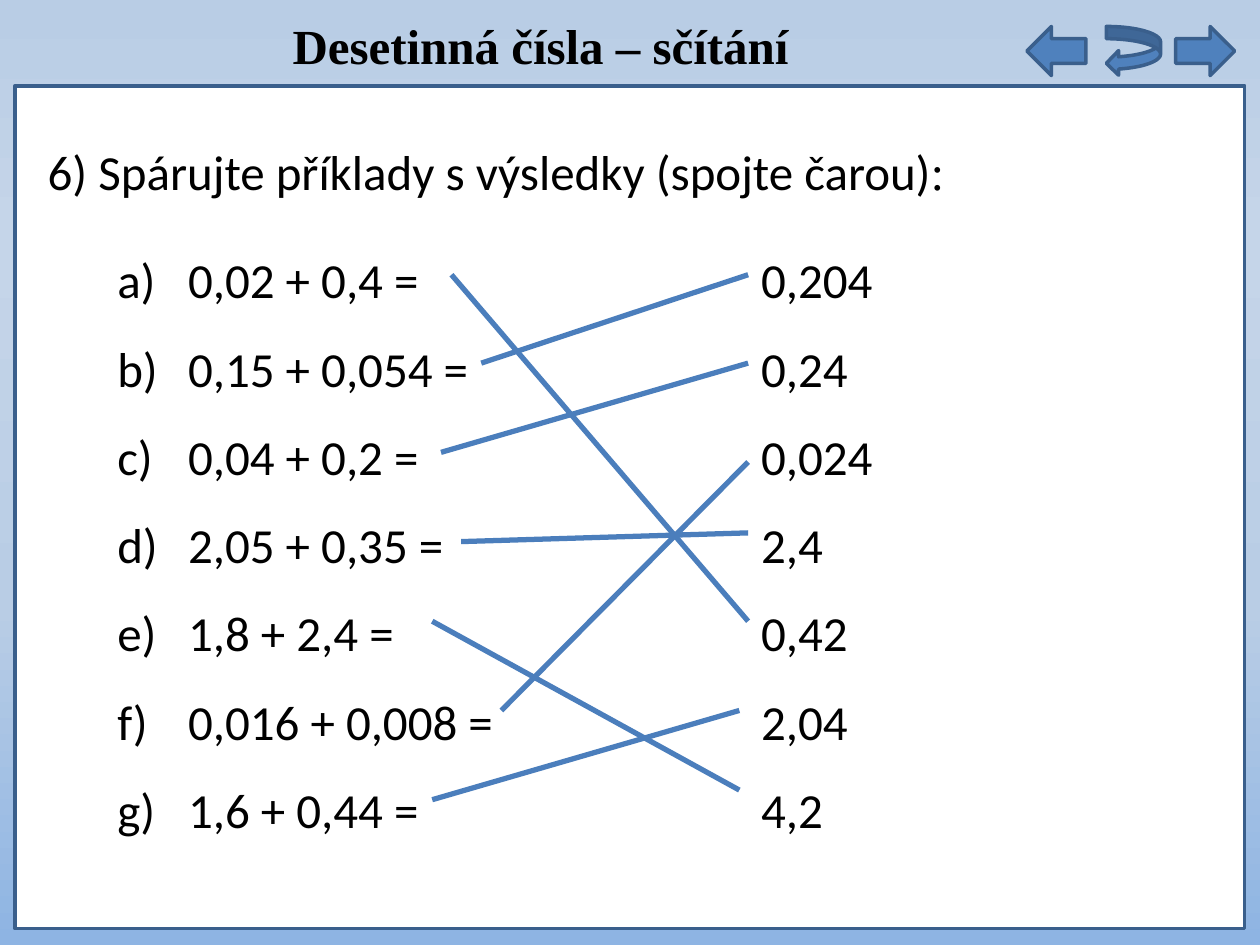
from lxml import etree
from pptx import Presentation
from pptx.dml.color import RGBColor
from pptx.enum import shapes, text
from pptx.oxml.ns import qn
from pptx.util import Pt

TITLE = "Desetinná čísla – sčítání"
TASK = [("6) Spárujte příklady s výsledky (spojte čarou)", "Calibri"),
        (":", "Times New Roman")]

# example, start of its line (x, y), matching result
EXAMPLES = [
    ("0,02 + 0,4 =", (258, 157), "0,42"),
    ("0,15 + 0,054 =", (275, 207.5), "0,204"),
    ("0,04 + 0,2 =", (252, 258.5), "0,24"),
    ("2,05 + 0,35 =", (263.5, 309.5), "2,4"),
    ("1,8 + 2,4 =", (247, 355), "4,2"),
    ("0,016 + 0,008 =", (286.5, 406), "0,024"),
    ("1,6 + 0,44 =", (247, 457), "2,04"),
]
# result -> end of the line that reaches it
RESULTS = {
    "0,204": (427.5, 157),
    "0,24": (427.5, 207.5),
    "0,024": (427.5, 264),
    "2,4": (427.5, 304.5),
    "0,42": (427.5, 355),
    "2,04": (422.5, 406),
    "4,2": (422.5, 451.5),
}
BACKGROUND = [(0, "B9CDE5"), (25, "C5D5E9"), (64, "B9CDE5"), (100, "8EB4E3")]
NAVIGATION = [
    (shapes.MSO_SHAPE.LEFT_ARROW, 586.8, 33.8),
    (shapes.MSO_SHAPE.CURVED_LEFT_ARROW, 632.2, 31),
    (shapes.MSO_SHAPE.RIGHT_ARROW, 671.8, 33.8),
]


def color(value):
    return RGBColor.from_string(value)


def place(shape, left, top, width, height):
    shape.left, shape.top = Pt(left), Pt(top)
    shape.width, shape.height = Pt(width), Pt(height)


def write(shape, paragraphs, spacing=1.5, bold=False, align=text.PP_ALIGN.LEFT,
          anchor=text.MSO_ANCHOR.TOP, fit=text.MSO_AUTO_SIZE.SHAPE_TO_FIT_TEXT,
          lettered=False):
    """Fill a shape with paragraphs, each a list of (text, font) runs."""
    frame = shape.text_frame
    frame.word_wrap = True
    frame.auto_size = fit
    frame.vertical_anchor = anchor
    for number, runs in enumerate(paragraphs):
        paragraph = frame.add_paragraph() if number else frame.paragraphs[0]
        paragraph.alignment = align
        paragraph.line_spacing = spacing
        paragraph.space_before = paragraph.space_after = Pt(0)
        properties = paragraph._p.get_or_add_pPr()
        indent = Pt(40.5) if lettered else 0
        properties.set("marL", str(indent))
        properties.set("indent", str(-indent))
        if lettered:
            etree.SubElement(properties, qn("a:buFont"), typeface="+mj-lt")
            etree.SubElement(properties, qn("a:buAutoNum"), type="alphaLcParenR")
        else:
            etree.SubElement(properties, qn("a:buNone"))
        for words, font_name in runs:
            run = paragraph.add_run()
            run.text = words
            run.font.name = font_name
            run.font.size = Pt(28)
            run.font.bold = bold
            run.font.color.rgb = color("000000")


def add_box(slide, kind, left, top, width, height, fill):
    box = slide.shapes.add_shape(kind, Pt(left), Pt(top), Pt(width), Pt(height))
    box.shadow.inherit = False
    box.fill.solid()
    box.fill.fore_color.rgb = color(fill)
    box.line.color.rgb = color("3A5F8C")
    box.line.width = Pt(2)
    return box


def add_line(slide, start, end):
    line = slide.shapes.add_connector(
        shapes.MSO_CONNECTOR.STRAIGHT, *map(Pt, start + end))
    line.line.color.rgb = color("4B7EBC")
    line.line.width = Pt(3)
    etree.SubElement(line._element.spPr, qn("a:effectLst"))


def paint_background(slide):
    fill = slide.background.fill
    fill.gradient()
    fill.gradient_angle = 270
    stops = next(slide._element.iter(qn("a:gsLst")))
    for stop in list(stops):
        stops.remove(stop)
    for percent, value in BACKGROUND:
        stop = etree.SubElement(stops, qn("a:gs"), pos=str(percent * 1000))
        etree.SubElement(stop, qn("a:srgbClr"), val=value)


def main():
    deck = Presentation()
    deck.slide_width, deck.slide_height = Pt(720), Pt(540)
    slide = deck.slides.add_slide(deck.slide_layouts.get_by_name("Two Content"))
    paint_background(slide)

    panel = add_box(slide, shapes.MSO_SHAPE.RECTANGLE, 8.6, 49, 702.7, 481.7, "FFFFFF")
    slide.shapes._spTree.insert(2, panel._element)  # behind the placeholders

    title, examples, results = slide.placeholders
    place(title, 2.2, -2.2, 613.4, 55.4)
    write(title, [[(TITLE, "Times New Roman")]], spacing=1, bold=True,
          align=text.PP_ALIGN.CENTER, anchor=text.MSO_ANCHOR.MIDDLE,
          fit=text.MSO_AUTO_SIZE.NONE)

    task = slide.shapes.add_textbox(Pt(20.2), Pt(60.5), Pt(652.3), Pt(58.3))
    write(task, [TASK])

    place(examples, 59.8, 122.4, 265.7, 363.6)
    write(examples, [[(sums, "Calibri")] for sums, _, _ in EXAMPLES], lettered=True)
    place(results, 427.7, 122.4, 79.2, 363.6)
    write(results, [[(result, "Calibri")] for result in RESULTS])

    for kind, left, width in NAVIGATION:
        add_box(slide, kind, left, 15.1, width, 28.1, "4F81BD")
    for _, start, result in EXAMPLES:
        add_line(slide, start, RESULTS[result])

    deck.save("out.pptx")


if __name__ == "__main__":
    main()
